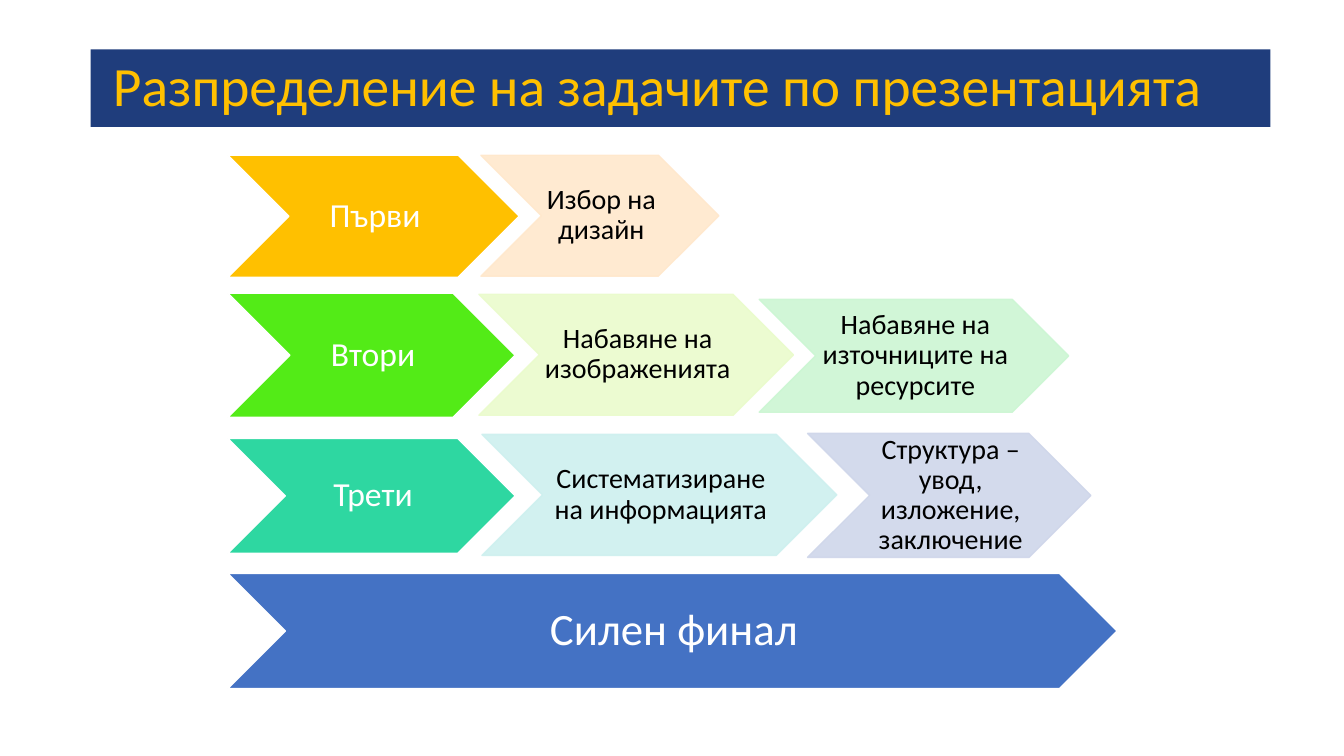
import pptx
import pptx.util
import pptx.dml.color
import pptx.enum.shapes
import pptx.enum.text
import pptx.oxml
import pptx.oxml.ns
from pptx.util import Inches

FONT = "Calibri"
COLORS = {
    "banner": "1F3D7C",
    "gold": "FFC000",
    "white": "FFFFFF",
    "black": "000000",
    "green": "53EB17",
    "teal": "2ED7A1",
    "blue": "4472C4",
    "pale_orange": "FFE8CC",
    "pale_lime": "EAFBCC",
    "pale_green": "CCF6D3",
    "pale_teal": "CEF0EF",
    "pale_blue": "CFD6EA",
}

ROW_LEFT = 2.26
TASK_OPACITY = 90

# Heading of each row: text, colour, top, width, height, text size
STAGES = [
    ("Първи", "gold", 1.54, 2.89, 1.21, 24),
    ("Втори", "green", 2.91, 2.85, 1.23, 24),
    ("Трети", "teal", 4.35, 2.85, 1.14, 24),
    ("Силен финал", "blue", 5.69, 8.82, 1.14, 32),
]

# Tasks: text, colour, left, top, width, height
TASKS = [
    ("Избор на дизайн", "pale_orange", 4.77, 1.54, 2.36, 1.2),
    ("Набавяне на изображенията", "pale_lime", 4.75, 2.92, 3.12, 1.2),
    ("Набавяне на източниците на ресурсите", "pale_green", 7.53, 2.97, 3.07, 1.12),
    ("Систематизиране на информацията", "pale_teal", 4.78, 4.31, 3.52, 1.2),
    ("Структура – увод, изложение, заключение", "pale_blue", 8.01, 4.3, 2.81, 1.23),
]


def rgb(name):
    return pptx.dml.color.RGBColor.from_string(COLORS[name])


def write_text(shape, text, size, color, align):
    frame = shape.text_frame
    frame.text = text
    frame.word_wrap = True
    frame.auto_size = pptx.enum.text.MSO_AUTO_SIZE.NONE
    frame.vertical_anchor = pptx.enum.text.MSO_ANCHOR.MIDDLE
    paragraph = frame.paragraphs[0]
    paragraph.alignment = align
    paragraph.line_spacing = 0.9
    font = paragraph.runs[0].font
    font.name = FONT
    font.size = pptx.util.Pt(size)
    font.color.rgb = rgb(color)


def set_opacity(shape, percent):
    """Apply the opacity to both the fill and the outline."""
    for color in shape._element.spPr.iter(pptx.oxml.ns.qn("a:srgbClr")):
        alpha = color.makeelement(
            pptx.oxml.ns.qn("a:alpha"), {"val": str(percent * 1000)})
        color.append(alpha)


def add_chevron(slide, box, text, size, fill, outline, text_color):
    chevron = slide.shapes.add_shape(
        pptx.enum.shapes.MSO_SHAPE.CHEVRON, *[Inches(length) for length in box])
    chevron.shadow.inherit = False
    chevron.fill.solid()
    chevron.fill.fore_color.rgb = rgb(fill)
    chevron.line.color.rgb = rgb(outline)
    chevron.line.width = pptx.util.Pt(1)
    write_text(chevron, text, size, text_color, pptx.enum.text.PP_ALIGN.CENTER)
    frame = chevron.text_frame
    frame.margin_left, frame.margin_right = Inches(0.03), 0
    frame.margin_top = frame.margin_bottom = Inches(0.01)
    return chevron


def add_title(slide, text):
    title = slide.shapes.title
    title.left, title.top = Inches(0.9), Inches(0.49)
    title.width, title.height = Inches(11.7), Inches(0.77)
    title.fill.solid()
    title.fill.fore_color.rgb = rgb("banner")
    write_text(title, text, 39.6, "gold", pptx.enum.text.PP_ALIGN.LEFT)
    title.text_frame.margin_left = Inches(0.22)


def main():
    deck = pptx.Presentation()
    deck.slide_width, deck.slide_height = Inches(13.33), Inches(7.5)
    slide = deck.slides.add_slide(deck.slide_layouts[5])

    add_title(slide, "Разпределение на задачите по презентацията")

    # Row headings and the closing bar
    for text, fill, top, width, height, size in STAGES:
        add_chevron(slide, (ROW_LEFT, top, width, height), text, size,
                    fill, "white", "white")

    # Pale task chevrons
    for text, fill, *box in TASKS:
        task = add_chevron(slide, box, text, 20, fill, fill, "black")
        set_opacity(task, TASK_OPACITY)

    deck.save("out.pptx")


if __name__ == "__main__":
    main()
